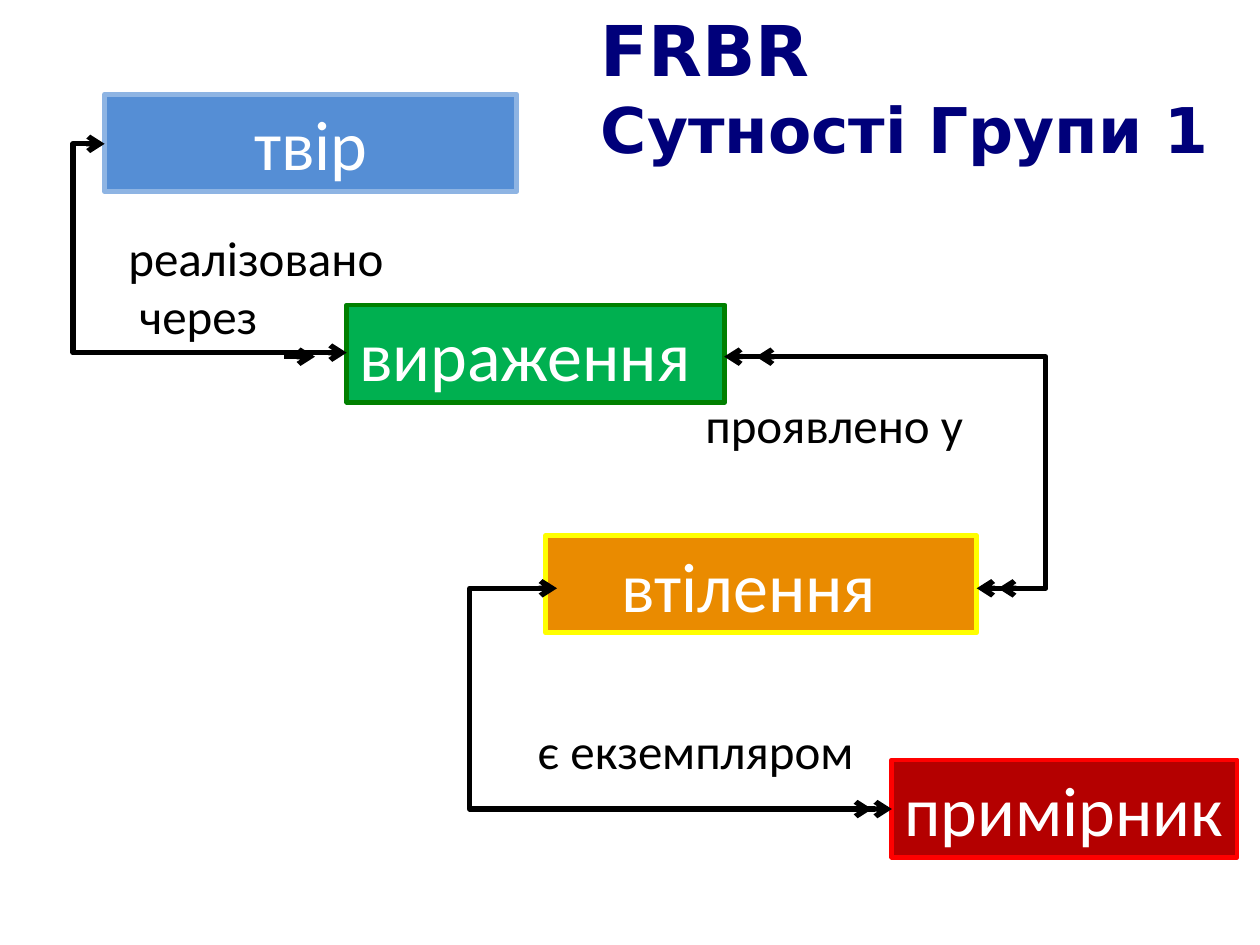
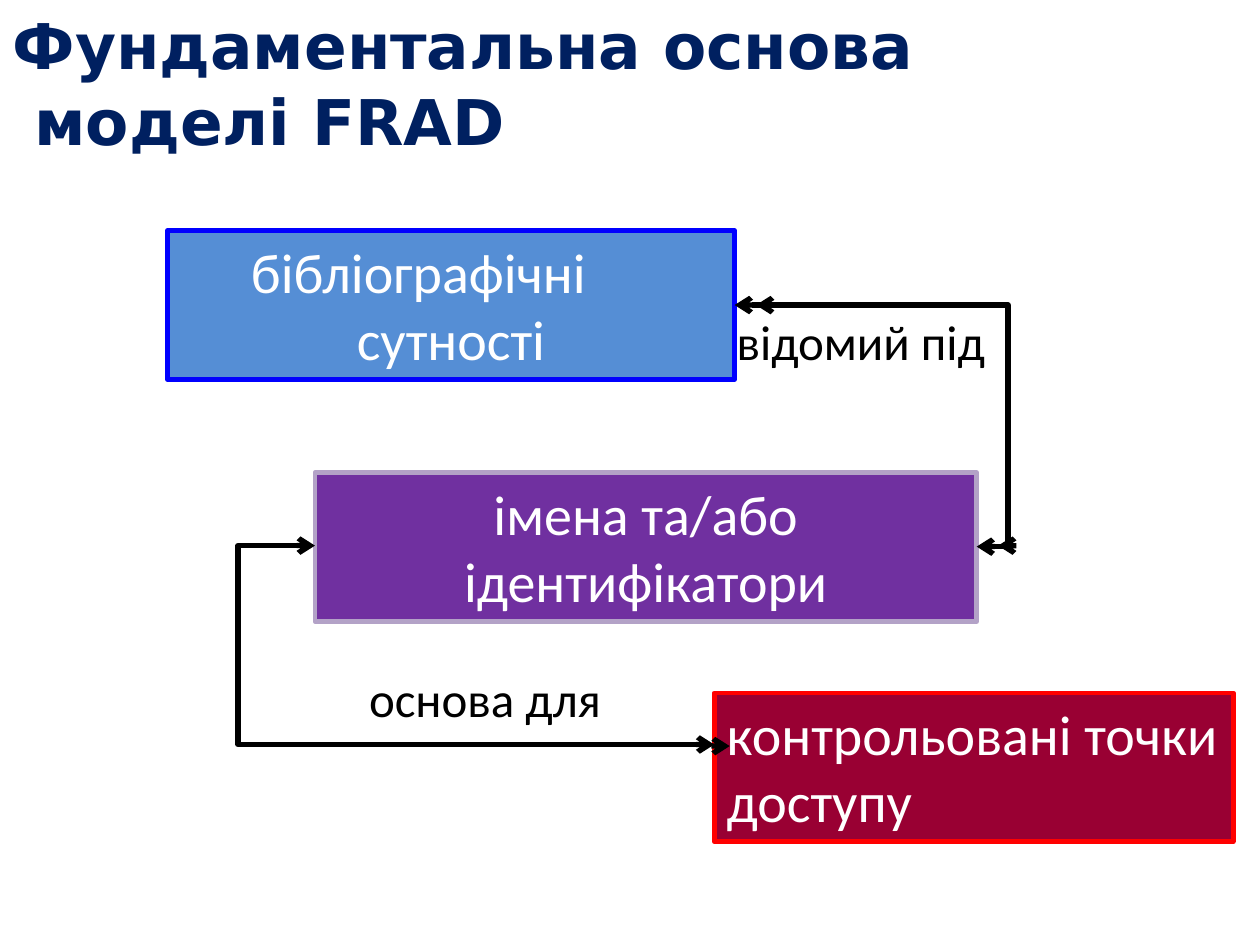
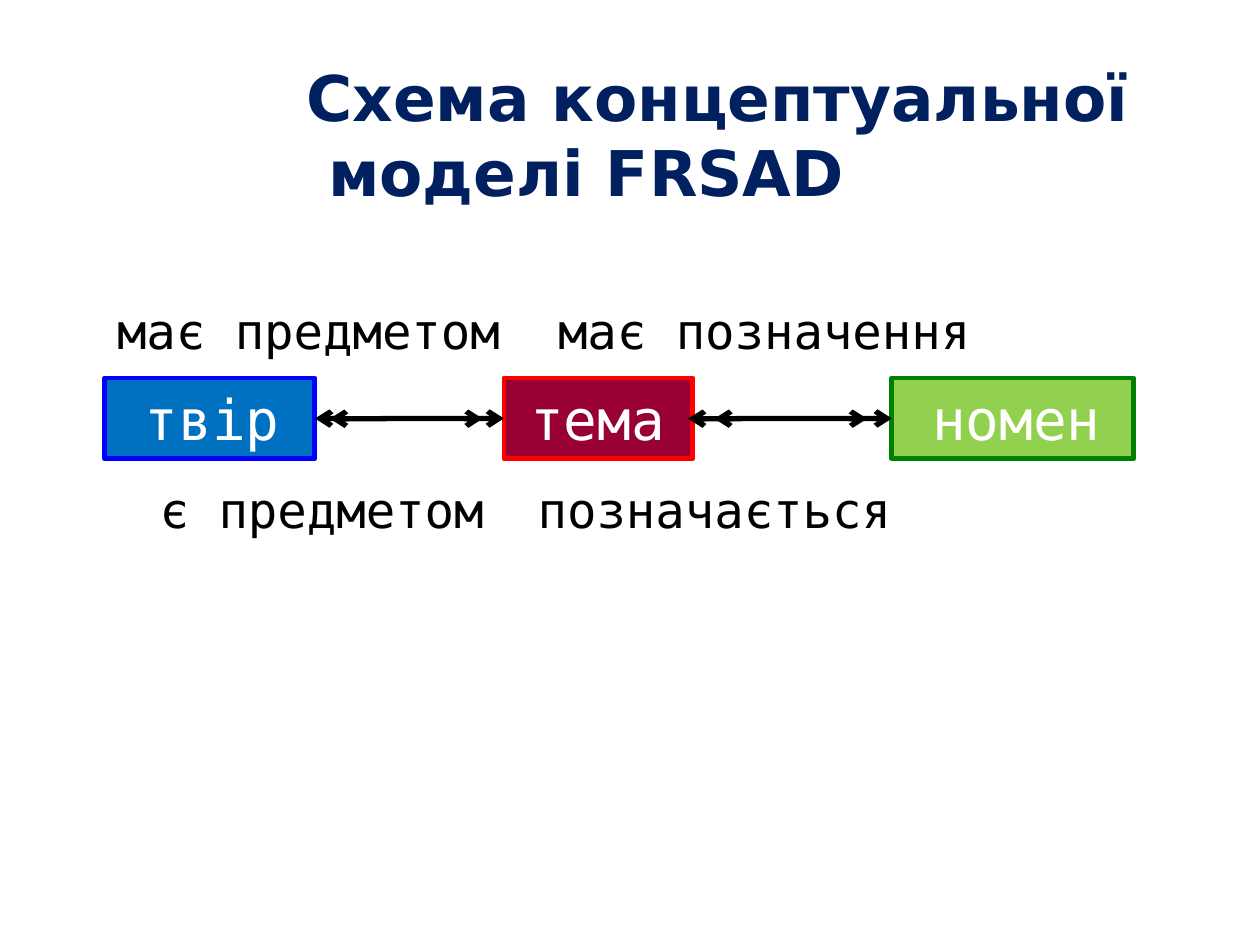
from dataclasses import dataclass
from typing import Optional

from lxml.etree import SubElement
from pptx import Presentation
from pptx.dml.color import RGBColor
from pptx.enum.shapes import MSO_CONNECTOR, MSO_SHAPE
from pptx.enum.text import MSO_ANCHOR, MSO_AUTO_SIZE, PP_ALIGN
from pptx.oxml.ns import qn
from pptx.util import Cm, Pt


# Colours, fonts and type sizes shared by the slides
@dataclass(frozen=True)
class Theme:
    white: str = "FFFFFF"
    black: str = "000000"
    navy: str = "00007A"
    ink: str = "002060"
    sky: str = "558ED5"
    pale: str = "8EB4E3"
    azure: str = "0070C0"
    blue: str = "0000FF"
    green: str = "00B050"
    lime: str = "92D050"
    forest: str = "008000"
    orange: str = "EA8B00"
    yellow: str = "FFFF00"
    brick: str = "B40000"
    wine: str = "990033"
    red: str = "FF0000"
    purple: str = "7030A0"
    lilac: str = "B3A2C7"
    sans: str = "Calibri"
    head: str = "DejaVu Sans"
    mono: str = "DejaVu Sans Mono"
    large: float = 40
    title: float = 36
    node: float = 32
    label: float = 28
    edge: float = 2.75
    wire: float = 3


T = Theme()


# Parts of a slide; all lengths are in centimetres
@dataclass(frozen=True)
class Line:
    text: str
    indent: float = 0
    size: Optional[float] = None
    mid: bool = False
    tabs: tuple[float, ...] = ()


@dataclass(frozen=True)
class Box:
    at: tuple[float, float, float, float]
    lines: tuple[Line, ...]
    fill: str = ""
    edge: str = ""
    size: float = T.label
    font: str = T.sans
    wrap: bool = True


@dataclass(frozen=True)
class Wire:
    start: tuple[float, float]
    end: tuple[float, float]
    bend: Optional[float] = None  # x of the upright part
    goal: Optional[Box] = None
    side: int = 1


@dataclass(frozen=True)
class Page:
    title: Box
    tone: str
    boxes: tuple[Box, ...]
    wires: tuple[Wire, ...]
    drop: float = 0.13  # inset above the title


def write(frame, lines, *, size, font, color, bold=False, wrap=True, top=0.13) -> None:
    frame.auto_size = MSO_AUTO_SIZE.NONE
    frame.word_wrap = wrap
    frame.vertical_anchor = MSO_ANCHOR.TOP
    frame.margin_top = Cm(top)
    for i, line in enumerate(lines):
        para = frame.add_paragraph() if i else frame.paragraphs[0]
        para.alignment = PP_ALIGN.CENTER if line.mid else PP_ALIGN.LEFT
        props = para._p.get_or_add_pPr()
        props.set("marL", str(Cm(line.indent)))
        props.set("indent", "0")
        if line.tabs:
            stops = SubElement(props, qn("a:tabLst"))
            for stop in line.tabs:
                SubElement(stops, qn("a:tab"), pos=str(Cm(stop)), algn="l")
        run = para.add_run()
        run.text = line.text
        run.font.size = Pt(line.size or size)
        run.font.name = font
        run.font.bold = bold
        run.font.color.rgb = RGBColor.from_string(color)


def draw_box(slide, box: Box):
    at = [Cm(v) for v in box.at]
    if box.fill:
        shape = slide.shapes.add_shape(MSO_SHAPE.RECTANGLE, *at)
        shape.shadow.inherit = False
        shape.fill.solid()
        shape.fill.fore_color.rgb = RGBColor.from_string(box.fill)
        shape.line.color.rgb = RGBColor.from_string(box.edge)
        shape.line.width = Pt(T.edge)
    else:
        shape = slide.shapes.add_textbox(*at)
    write(shape.text_frame, box.lines, size=box.size, font=box.font,
          color=T.white if box.fill else T.black, wrap=box.wrap)
    return shape


def draw_wire(slide, wire: Wire, shapes: dict) -> None:
    bent = wire.bend is not None
    kind = MSO_CONNECTOR.ELBOW if bent else MSO_CONNECTOR.STRAIGHT
    link = slide.shapes.add_connector(kind, *(Cm(v) for v in wire.start + wire.end))
    link.line.color.rgb = RGBColor.from_string(T.black)
    link.line.width = Pt(T.wire)
    props = link.element.spPr
    if bent:
        ratio = (wire.bend - wire.start[0]) / (wire.end[0] - wire.start[0])
        geom = props.find(qn("a:prstGeom"))
        guides = geom.find(qn("a:avLst"))
        if guides is None:
            guides = SubElement(geom, qn("a:avLst"))
        SubElement(guides, qn("a:gd"), name="adj1", fmla=f"val {round(ratio * 100000)}")
    for tip in ("a:headEnd", "a:tailEnd") if bent else ("a:tailEnd",):
        SubElement(props.find(qn("a:ln")), qn(tip), type="arrow")
    SubElement(props, qn("a:effectLst"))
    if wire.goal:
        link.end_connect(shapes[wire.goal], wire.side)


def draw_page(deck, page: Page) -> None:
    slide = deck.slides.add_slide(deck.slide_layouts[5])
    head = slide.shapes.title
    head.left, head.top, head.width, head.height = (Cm(v) for v in page.title.at)
    write(head.text_frame, page.title.lines, size=T.title, font=T.head,
          color=page.tone, bold=True, top=page.drop)
    shapes = {box: draw_box(slide, box) for box in page.boxes}
    for wire in page.wires:
        draw_wire(slide, wire, shapes)


def level(y: float, *spans: tuple[float, float]) -> tuple[Wire, ...]:
    """Straight arrows along one height."""
    return tuple(Wire((a, y), (b, y)) for a, b in spans)


# Group 1 entities
TALL = 1.96
ROW = 1.45
group = Page(
    Box((11.86, 0, 16.89, 3.51), (Line("FRBR", size=T.large), Line("Сутності Групи 1"))),
    T.navy,
    (
        Box((2.11, 1.9, 8.31, TALL), (Line("твір", mid=True),), T.sky, T.pale, T.large),
        Box((6.99, 6.15, 7.62, TALL), (Line("вираження"),), T.green, T.forest, T.large),
        Box((11, 10.8, 8.69, TALL), (Line("втілення", 1.27),), T.orange, T.yellow, T.large),
        Box((17.98, 15.32, 6.96, TALL), (Line("примірник"),), T.brick, T.red, T.large,
            wrap=False),
        Box((2.34, 4.45, 5.72, 2.64), (Line("реалізовано"), Line("через", 0.22)), wrap=False),
        Box((13.97, 7.82, 7.19, ROW), (Line("проявлено у"),)),
        Box((10.59, 14.4, 6.93, ROW), (Line("є екземпляром"),), wrap=False),
    ),
    (
        Wire((2.11, 2.9), (6.99, 7.11), 1.47),
        Wire((14.6, 7.19), (19.69, 11.86), 21.08),
        Wire((11.23, 11.86), (17.98, 16.31), 9.47),
        *level(16.31, (17.35, 17.58)),
        *level(7.19, (15.44, 15.24), (5.72, 6.35)),
        *level(11.86, (20.32, 20.12)),
    ),
)

# Basis of the FRAD model
DEEP = 3
basis = Page(
    Box((0, 0, 28.52, 4.88), (Line("Фундаментальна основа"), Line("моделі FRАD", 0.44))),
    T.ink,
    (
        Box((3.38, 4.65, 11.43, DEEP),
            (Line("бібліографічні", 1.43), Line("сутності", mid=True)),
            T.sky, T.blue, T.node),
        Box((6.35, 9.53, 13.34, DEEP), (Line("імена та/або ідентифікатори", mid=True),),
            T.purple, T.lilac, T.node),
        Box((14.4, 13.97, 10.46, DEEP), (Line("контрольовані точки доступу"),),
            T.wine, T.red, T.node),
        Box((14.6, 6.15, 8.89, ROW), (Line("відомий під"),)),
        Box((7.19, 13.34, 8.26, ROW), (Line("основа для"),)),
    ),
    (
        Wire((14.81, 6.15), (19.69, 11.02), 20.32),
        Wire((6.35, 11), (14.4, 15.01), 4.8),
        *level(15.04, (14.4, 14.71)),
        *level(6.15, (15.54, 15.24)),
        *level(11, (20.42, 20.12)),
    ),
)

# Scheme of the FRSAD model
TOP, LOW = 7.62, 1.63
AXIS = round(TOP + LOW / 2, 2)
nomen = Box((17.98, TOP, 4.88, LOW), (Line("номен", 0.56),), T.lime, T.forest, T.node, T.mono)
work = Box((2.11, TOP, 4.24, LOW), (Line("твір", 0.56),), T.azure, T.blue, T.node, T.mono)
theme = Box((10.16, TOP, 3.81, LOW), (Line("тема", 0.28),), T.wine, T.red, T.node, T.mono)
scheme = Page(
    Box((5.92, -0.43, 23.93, 6.4), (Line("Схема концептуальної"), Line("моделі FRSАD", 0.44))),
    T.ink,
    (
        nomen, work, theme,
        Box((0.84, 5.92, 23.93, ROW),
            (Line("\tмає предметом\tмає позначення", tabs=(1.69, 14.18)),), font=T.mono),
        Box((2.97, 9.53, 21.59, ROW),
            (Line("є предметом\tпозначається", tabs=(11.9,)),), font=T.mono),
    ),
    (
        Wire((6.99, AXIS), (10.16, AXIS), goal=theme),
        Wire((6.99, AXIS), (6.35, AXIS), goal=work, side=3),
        Wire((14.17, AXIS), (17.98, AXIS), goal=nomen),
        *level(AXIS, (14.17, 13.87), (6.99, 6.65), (15.44, 14.4), (16.51, 17.48), (9.09, 9.73)),
    ),
    drop=1.6,
)


def main() -> None:
    deck = Presentation()
    deck.slide_width, deck.slide_height = Cm(25.4), Cm(19.05)
    for page in (group, basis, scheme):
        draw_page(deck, page)
    deck.save("out.pptx")


if __name__ == "__main__":
    main()
